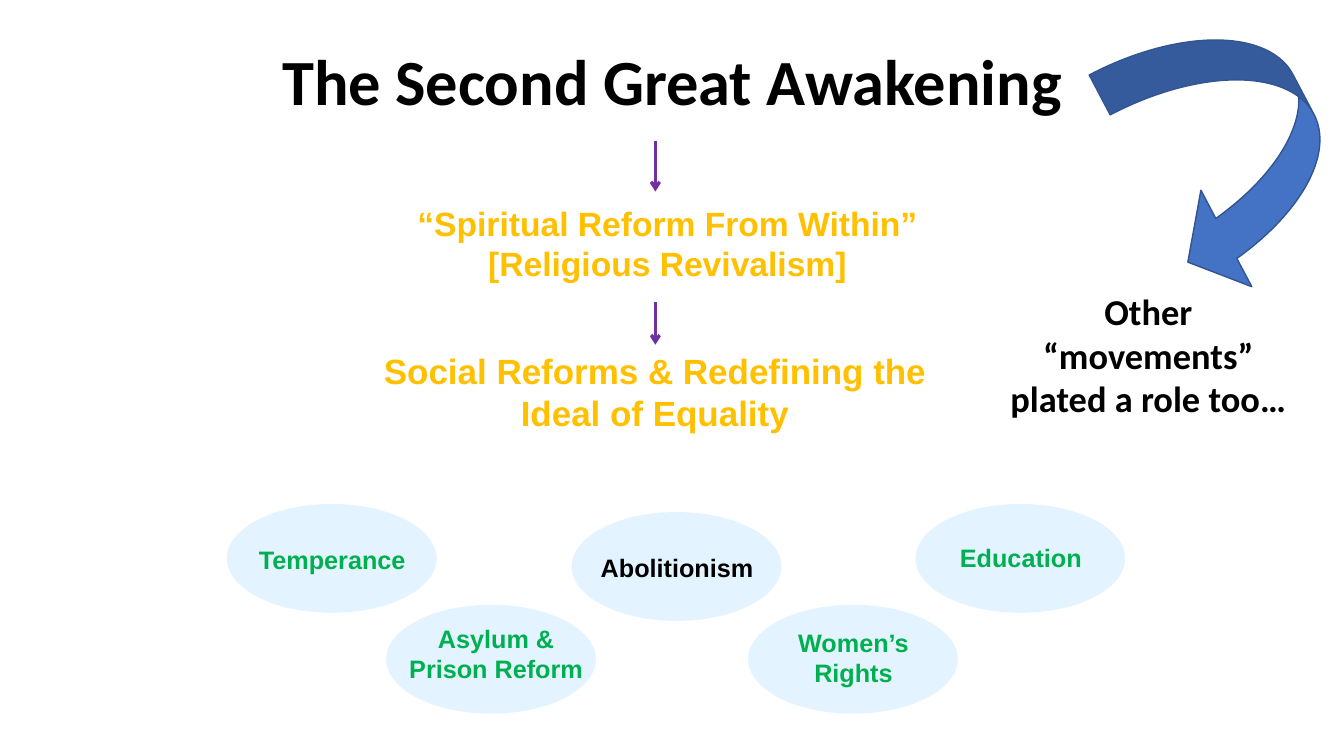
from lxml import etree
from pptx import Presentation
from pptx.dml.color import RGBColor
from pptx.enum import shapes, text
from pptx.oxml import ns
from pptx.util import Inches, Pt

COLORS = {
    "black": "000000",
    "gold": "FFC000",
    "green": "00B050",
    "purple": "7030A0",
    "pale_blue": "C9E8FF",
    "blue": "4472C4",
    "dark_blue": "325491",
}

REFORMS = [
    ("Temperance", 2.25, 5, 0.35, 1.75, "green"),
    ("Asylum &\nPrison Reform", 3.83, 6, 0.13, 2, "green"),
    ("Education", 9.08, 5, 0.33, 1.75, "green"),
    ("Women’s Rights", 7.42, 6, 0.17, 1.75, "green"),
    ("Abolitionism", 5.67, 5.08, 0.35, 1.75, "black"),
]


def color(name):
    return RGBColor.from_string(COLORS[name])


def place(shape, left, top, width, height):
    shape.left, shape.top = Inches(left), Inches(top)
    shape.width, shape.height = Inches(width), Inches(height)


def write(text_frame, content, size, font="Arial", fill="black", wrap=True,
          anchor=text.MSO_ANCHOR.TOP):
    text_frame.word_wrap = wrap
    text_frame.auto_size = text.MSO_AUTO_SIZE.NONE
    text_frame.vertical_anchor = anchor
    paragraph = text_frame.paragraphs[0]
    paragraph.text = content
    paragraph.alignment = text.PP_ALIGN.CENTER
    for run in paragraph.runs:
        run.font.name = font
        run.font.size = Pt(size)
        run.font.bold = True
        run.font.color.rgb = color(fill)


def add_label(slide, content, left, top, width, height, **formatting):
    box = slide.shapes.add_textbox(
        Inches(left), Inches(top), Inches(width), Inches(height))
    write(box.text_frame, content, **formatting)


def add_down_arrow(slide, x, top, bottom):
    arrow = slide.shapes.add_connector(
        shapes.MSO_CONNECTOR.STRAIGHT,
        Inches(x), Inches(top), Inches(x), Inches(bottom))
    arrow.line.color.rgb = color("purple")
    arrow.line.width = Pt(2.25)
    outline = arrow.line._get_or_add_ln()
    etree.SubElement(outline, ns.qn("a:tailEnd"), type="arrow")
    etree.SubElement(arrow._element.spPr, ns.qn("a:effectLst"))


def add_title(slide, left, top, width, height):
    title = slide.shapes.title
    place(title, left, top, width, height)
    write(title.text_frame, "The Second Great Awakening", size=46,
          font="Calibri", wrap=False, anchor=text.MSO_ANCHOR.MIDDLE)


def add_reform_chain(slide, left, top):
    arrow_x = left + 3.17
    add_down_arrow(slide, arrow_x, top, top + 0.5)
    add_label(slide, "“Spiritual Reform From Within”\n[Religious Revivalism]",
              left + 0.25, top + 0.56, 6.08, 0.91, size=24, fill="gold")
    add_down_arrow(slide, arrow_x, top + 1.6, top + 2.02)
    add_label(slide, "Social Reforms & Redefining the Ideal of Equality",
              left, top + 2.02, 6.33, 0.94, size=25, fill="gold")


def add_reform(slide, name, left, top, label_drop, label_width, fill):
    width, height = 2.08, 1.08
    oval = slide.shapes.add_shape(
        shapes.MSO_SHAPE.OVAL,
        Inches(left), Inches(top), Inches(width), Inches(height))
    oval.shadow.inherit = False
    oval.fill.solid()
    oval.fill.fore_color.rgb = color("pale_blue")
    oval.line.fill.background()
    fill_color = oval._element.spPr.find(".//" + ns.qn("a:srgbClr"))
    etree.SubElement(fill_color, ns.qn("a:alpha"), val="50000")
    label_left = left + (0.09 if label_width > 1.75 else 0.17)
    add_label(slide, name, label_left, top + label_drop, label_width,
              height - 2 * label_drop, size=18, fill=fill)


def add_other_movements(slide, left, top):
    arrow = slide.shapes.add_shape(
        shapes.MSO_SHAPE.CURVED_UP_ARROW,
        Inches(left + 1.06), Inches(top), Inches(2.64), Inches(1.79))
    arrow.shadow.inherit = False
    arrow.rotation = 62.2
    arrow._element.spPr.xfrm.set("flipV", "1")
    for index, value in enumerate((0.25, 0.605, 0.25)):
        arrow.adjustments[index] = value
    arrow.fill.solid()
    arrow.fill.fore_color.rgb = color("blue")
    arrow.line.color.rgb = color("dark_blue")
    arrow.line.width = Pt(1)
    add_label(slide, "Other “movements” plated a role too…",
              left, top + 2.22, 3.12, 1.85, size=26, font="Calibri")


def main():
    presentation = Presentation()
    presentation.slide_width = Inches(13.33)
    presentation.slide_height = Inches(7.5)
    slide = presentation.slides.add_slide(presentation.slide_layouts[5])
    add_title(slide, 1.75, 0.08, 9.83, 1.42)
    add_reform_chain(slide, 3.33, 1.4)
    for reform in REFORMS:
        add_reform(slide, *reform)
    add_other_movements(slide, 9.83, 0.6)
    presentation.save("out.pptx")


if __name__ == "__main__":
    main()
